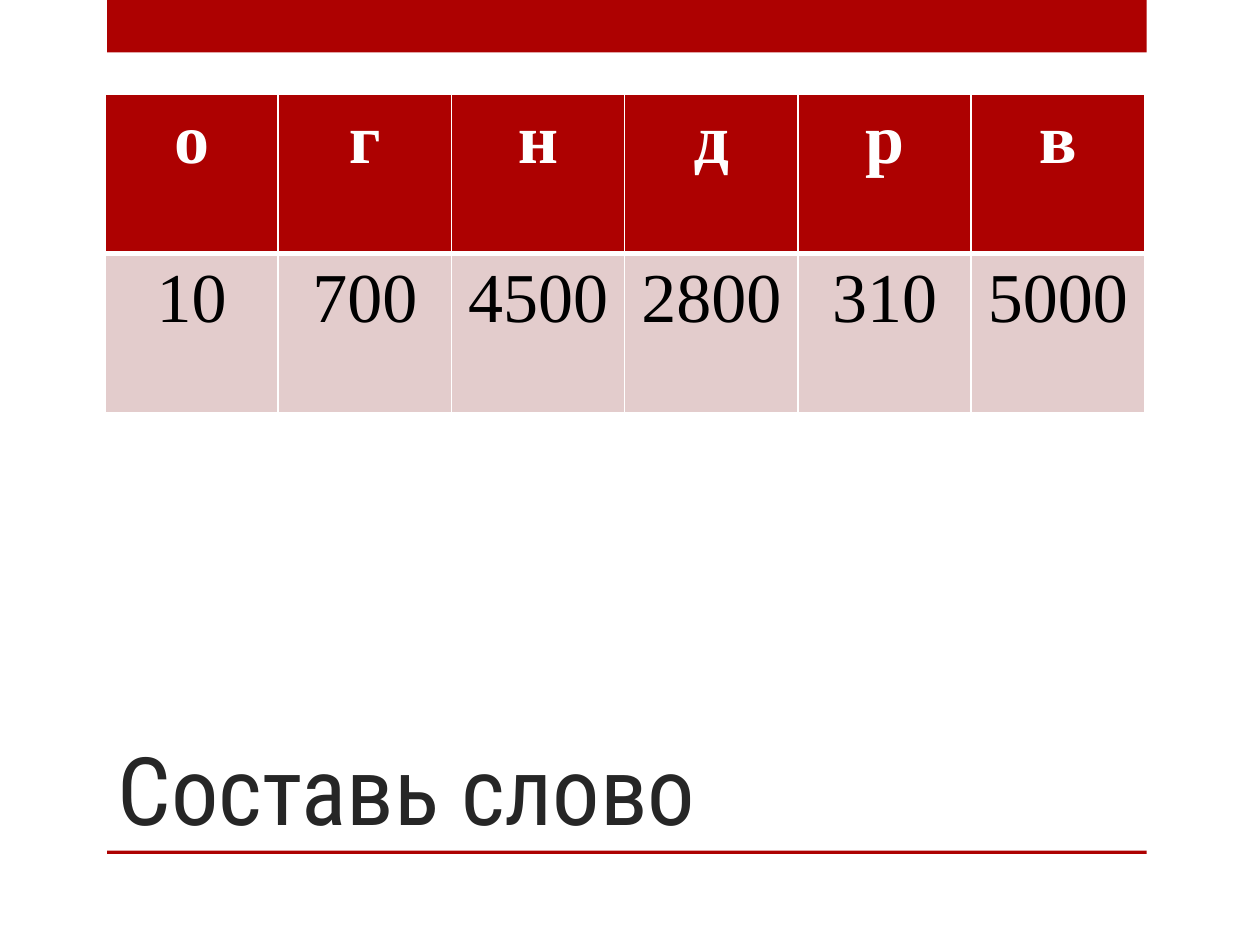
"""Build a word puzzle slide with a table of letters and numbers."""
import pptx
import pptx.dml.color
import pptx.enum.shapes
import pptx.enum.text
import pptx.oxml
import pptx.oxml.ns
import pptx.util

Pt = pptx.util.Pt
RED, PINK, WHITE, BLACK, GREY = "AD0101", "E3CCCC", "FFFFFF", "000000", "262626"

TITLE = "Составь слово"
ROWS = [
    {"texts": ["о", "г", "н", "д", "р", "в"], "fill": RED, "color": WHITE,
     "bold": True, "borders": {"L": 1, "R": 1, "T": 1, "B": 3}},
    {"texts": ["10", "700", "4500", "2800", "310", "5000"], "fill": PINK, "color": BLACK,
     "bold": False, "borders": {"L": 1, "R": 1, "T": 3, "B": 1}},
]
BARS = [(0, 30), (486, 2)]
BAR_LEFT, WIDTH = 61.2, 594
LEFT, TABLE_TOP, ROW_HEIGHT = 60, 54, 91


def paint(color_format, color):
    color_format.rgb = pptx.dml.color.RGBColor.from_string(color)


def fill_solid(item, color):
    item.fill.solid()
    paint(item.fill.fore_color, color)


def style(para, font_name, size, color, bold, align):
    para.alignment = align
    para.font.name = font_name
    para.font.size = Pt(size)
    para.font.bold = bold
    paint(para.font.color, color)


def add_bar(page, top, height):
    bar = page.shapes.add_shape(pptx.enum.shapes.MSO_SHAPE.RECTANGLE,
                                Pt(BAR_LEFT), Pt(top), Pt(WIDTH), Pt(height))
    bar.shadow.inherit = False
    fill_solid(bar, RED)
    bar.line.fill.background()


def set_borders(cell, borders):
    properties = cell._tc.get_or_add_tcPr()
    for position, (side, width) in enumerate(borders.items()):
        line = pptx.oxml.parse_xml(
            f'<a:ln{side} {pptx.oxml.ns.nsdecls("a")} w="{Pt(width)}"><a:solidFill>'
            f'<a:srgbClr val="{WHITE}"/></a:solidFill></a:ln{side}>')
        properties.insert(position, line)


def add_title(page):
    title = page.shapes.title
    title.left, title.top, title.width, title.height = Pt(LEFT), Pt(360), Pt(534), Pt(126)
    frame = title.text_frame
    frame.text = TITLE
    frame.word_wrap = True
    frame.auto_size = pptx.enum.text.MSO_AUTO_SIZE.NONE
    frame.vertical_anchor = pptx.enum.text.MSO_ANCHOR.BOTTOM
    style(frame.paragraphs[0], "Roboto Condensed", 54, GREY, False,
          pptx.enum.text.PP_ALIGN.LEFT)


def add_letter_table(page):
    columns = len(ROWS[0]["texts"])
    table = page.shapes.add_table(len(ROWS), columns, Pt(LEFT), Pt(TABLE_TOP),
                                  Pt(WIDTH), Pt(ROW_HEIGHT * len(ROWS))).table
    for row_index, row in enumerate(ROWS):
        for column, text in enumerate(row["texts"]):
            cell = table.cell(row_index, column)
            cell.text = text
            fill_solid(cell, row["fill"])
            set_borders(cell, row["borders"])
            style(cell.text_frame.paragraphs[0], "Times New Roman", 40, row["color"],
                  row["bold"], pptx.enum.text.PP_ALIGN.CENTER)


def main():
    deck = pptx.Presentation()
    deck.slide_width, deck.slide_height = Pt(720), Pt(540)
    page = deck.slides.add_slide(deck.slide_layouts.get_by_name("Title Only"))
    for top, height in BARS:
        add_bar(page, top, height)
    add_title(page)
    add_letter_table(page)
    deck.save("out.pptx")


if __name__ == "__main__":
    main()
